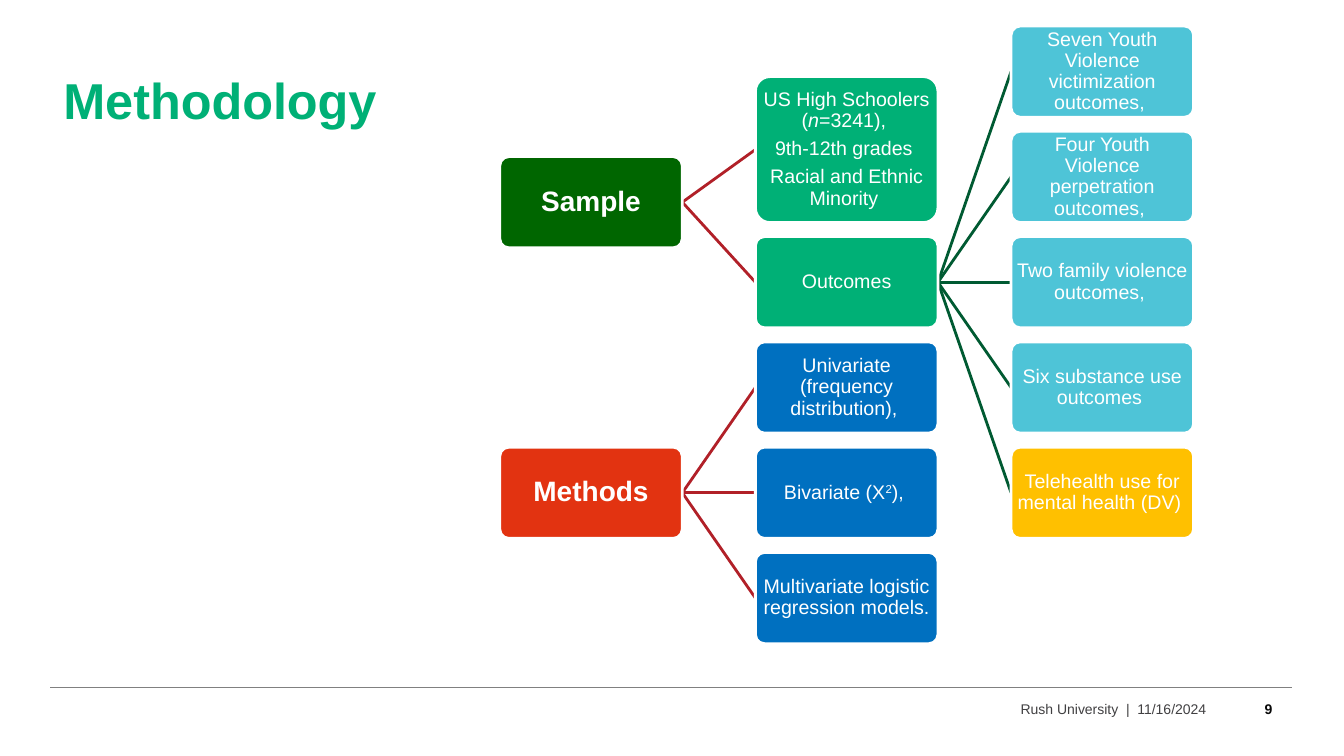
from pptx import Presentation
from pptx.dml import color
from pptx.enum import shapes, text
from pptx.oxml import ns
from pptx.util import Pt
from lxml import etree

TITLE = "Methodology"
FOOTER = "Rush University  |  11/16/2024"
PAGE_NUMBER = "9"

COHORT = [
    [("US High Schoolers (", ""), ("n", "italic"), ("=3241), ", "")],
    [("9th-12th grades ", "")],
    [("Racial and Ethnic Minority ", "")],
]
BIVARIATE = [[("Bivariate (X", ""), ("2", "super"), ("), ", "")]]


def plain(words, style=""):
    return [[(words, style)]]


# name: (column, first row, last row, fill, paragraphs)
BOXES = {
    "sample": (0, 1.24, 1.24, "006600", plain("Sample", "bold")),
    "cohort": (1, 0.48, 1, "00B076", COHORT),
    "outcomes": (1, 2, 2, "00B076", plain("Outcomes")),
    "victim": (2, 0, 0, "4EC4D7", plain("Seven Youth Violence victimization outcomes, ")),
    "perpetrator": (2, 1, 1, "4EC4D7", plain("Four Youth Violence perpetration outcomes, ")),
    "family": (2, 2, 2, "4EC4D7", plain("Two family violence outcomes, ")),
    "substance": (2, 3, 3, "4EC4D7", plain("Six substance use outcomes ")),
    "telehealth": (2, 4, 4, "FFC000", plain("Telehealth use for mental health (DV) ")),
    "methods": (0, 4, 4, "E23311", plain("Methods", "bold")),
    "univariate": (1, 3, 3, "0070C0", plain("Univariate (frequency distribution), ")),
    "bivariate": (1, 4, 4, "0070C0", BIVARIATE),
    "multivariate": (1, 5, 5, "0070C0", plain("Multivariate logistic regression models.")),
}
BRANCHES = [
    ("sample", "B12028", ["cohort", "outcomes"]),
    ("outcomes", "005A32", ["victim", "perpetrator", "family", "substance", "telehealth"]),
    ("methods", "B12028", ["univariate", "bivariate", "multivariate"]),
]

LEFT, TOP = 357, 18.6
BOX_WIDTH, BOX_HEIGHT = 130.4, 65.2
COLUMN_STEP, ROW_STEP = 182.6, 75.2

deck = Presentation()
deck.slide_width, deck.slide_height = Pt(960), Pt(540)
page = deck.slides.add_slide(deck.slide_layouts[5])


def rgb(value):
    return color.RGBColor.from_string(value)


def style_font(font, size, value, bold=False):
    font.name, font.size, font.bold = "Arial", Pt(size), bold
    font.color.rgb = rgb(value)


def set_frame(frame, margin, anchor=text.MSO_ANCHOR.MIDDLE):
    frame.word_wrap = True
    frame.auto_size = text.MSO_AUTO_SIZE.NONE
    frame.vertical_anchor = anchor
    frame.margin_left = frame.margin_right = Pt(margin)
    frame.margin_top = frame.margin_bottom = Pt(margin)


def place(name):
    column, first, last = BOXES[name][:3]
    return (LEFT + column * COLUMN_STEP, TOP + first * ROW_STEP,
            BOX_WIDTH, BOX_HEIGHT + (last - first) * ROW_STEP)


def add_line(x1, y1, x2, y2, value, width):
    line = page.shapes.add_connector(
        shapes.MSO_CONNECTOR.STRAIGHT, Pt(x1), Pt(y1), Pt(x2), Pt(y2))
    line.line.color.rgb = rgb(value)
    line.line.width = Pt(width)
    etree.SubElement(line._element.spPr, ns.qn("a:effectLst"))


def add_box(name):
    fill, paragraphs = BOXES[name][3:]
    box = page.shapes.add_shape(
        shapes.MSO_SHAPE.ROUNDED_RECTANGLE, *[Pt(length) for length in place(name)])
    box.shadow.inherit = False
    box.adjustments[0] = 0.1
    box.fill.solid()
    box.fill.fore_color.rgb = rgb(fill)
    box.line.color.rgb = rgb("FFFFFF")
    box.line.width = Pt(2)
    frame = box.text_frame
    set_frame(frame, 0.7)
    for index, pieces in enumerate(paragraphs):
        para = frame.add_paragraph() if index else frame.paragraphs[0]
        para.alignment = text.PP_ALIGN.CENTER
        para.line_spacing = 0.9
        for words, style in pieces:
            span = para.add_run()
            span.text = words
            size = 20 if style == "bold" else 14
            style_font(span.font, size, "FFFFFF", style == "bold")
            span.font.italic = style == "italic"
            if style == "super":
                span._r.get_or_add_rPr().set("baseline", "30000")
        para.space_after = Pt(0.35 * size)


def add_label(words, left, top, width, height, align, value, bold):
    box = page.shapes.add_textbox(Pt(left), Pt(top), Pt(width), Pt(height))
    frame = box.text_frame
    frame.text = words
    set_frame(frame, 0)
    para = frame.paragraphs[0]
    para.alignment = align
    style_font(para.runs[0].font, 10, value, bold)


title = page.shapes.title
title.left, title.top, title.width, title.height = Pt(38), Pt(46), Pt(245), Pt(94)
title.text_frame.text = TITLE
set_frame(title.text_frame, 7.2, text.MSO_ANCHOR.TOP)
title.text_frame.margin_top = Pt(3.6)
title.text_frame.paragraphs[0].alignment = text.PP_ALIGN.LEFT
style_font(title.text_frame.paragraphs[0].runs[0].font, 36, "00B076", True)

for parent, value, children in BRANCHES:
    left, top, width, height = place(parent)
    for child in children:
        child_left, child_top, _, child_height = place(child)
        add_line(left + width, top + height / 2,
                 child_left, child_top + child_height / 2, value, 2)
for name in BOXES:
    add_box(name)

add_line(36, 491.4, 923, 491.4, "808080", 0.75)
add_label(FOOTER, 366.5, 495.4, 495, 21.6, text.PP_ALIGN.RIGHT, "414042", False)
add_label(PAGE_NUMBER, 887, 500, 38, 12, text.PP_ALIGN.CENTER, "080808", True)

deck.save("out.pptx")
